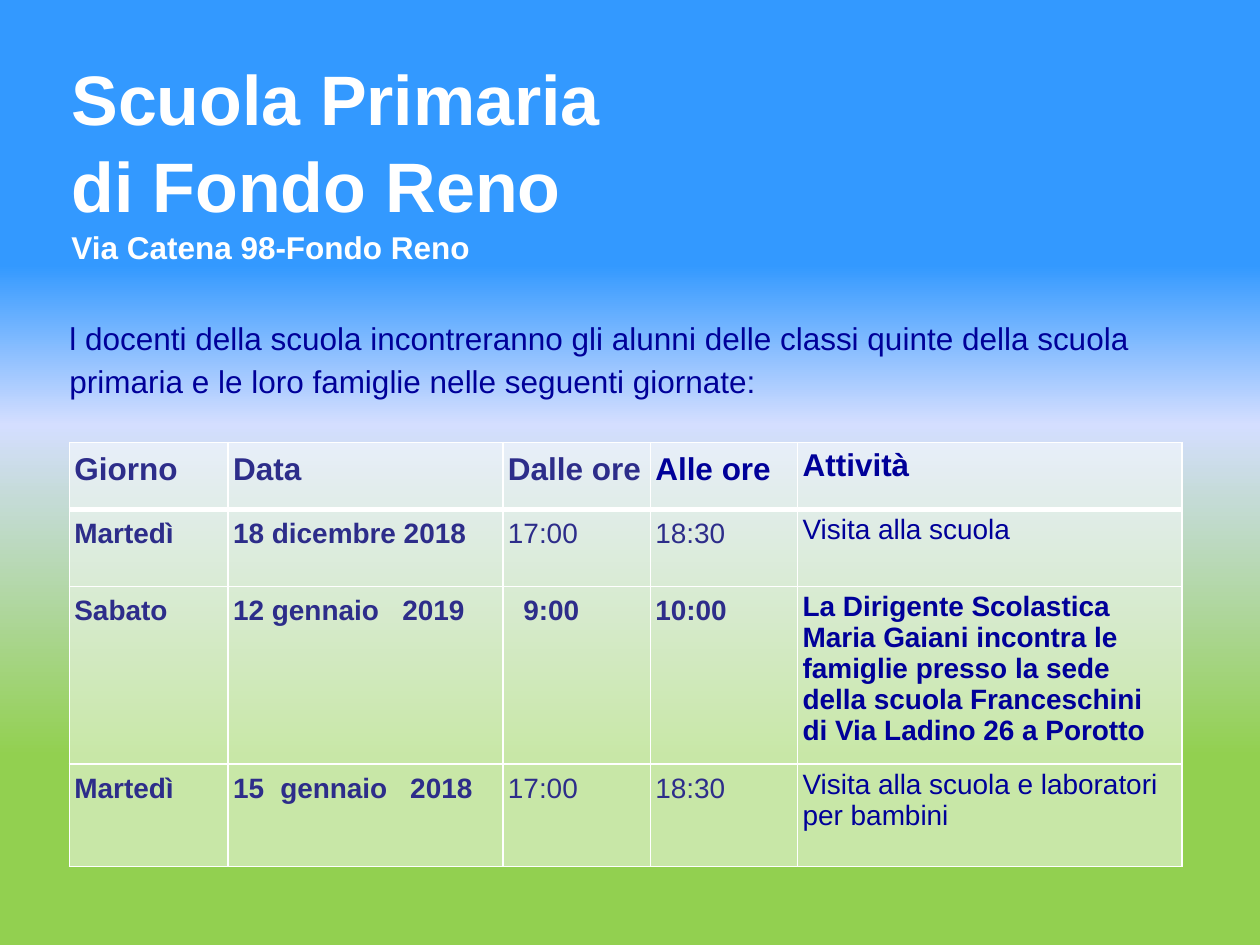
from dataclasses import dataclass

from lxml.etree import SubElement
from pptx import Presentation
from pptx.dml.color import RGBColor
from pptx.enum.text import MSO_ANCHOR
from pptx.oxml.ns import qn
from pptx.util import Cm, Pt

WHITE = RGBColor(0xFF, 0xFF, 0xFF)
NAVY = RGBColor(0x00, 0x00, 0x99)
INDIGO = RGBColor(0x2D, 0x2D, 0x8A)
SKY = RGBColor(0x33, 0x99, 0xFF)
LAVENDER = RGBColor(0xD4, 0xDE, 0xFF)
MIST = RGBColor(0xC4, 0xDB, 0xD5)
GRASS = RGBColor(0x92, 0xD0, 0x50)

BACKGROUND_STOPS = ((0, SKY), (28, SKY), (45, LAVENDER),
                    (53, MIST), (80, GRASS), (100, GRASS))
COLUMN_WIDTHS = (3.2, 5.54, 2.97, 2.97, 7.75)
ROW_HEIGHTS = (1.35, 1.55, 3.58, 2.06)
ACTIVITY_COLUMN = 4


@dataclass(frozen=True)
class Entry:
    text: str
    bold: bool = True
    color: RGBColor = INDIGO
    size: int = 16
    tabs: tuple[float, ...] = ()
    indent: float = 0


@dataclass(frozen=True)
class TextArea:
    left: float
    top: float
    width: float
    height: float
    inset: float
    line_spacing: float
    entries: tuple[Entry, ...]


TITLE = TextArea(1.19, 1.22, 22.86, 3.96, 0.25, 1.04, (
    Entry("Scuola Primaria\vdi Fondo Reno\v", color=WHITE, size=40),
    Entry("Via Catena 98-Fondo Reno", color=WHITE, size=18),
))
INTRODUCTION = TextArea(1.4, 6.35, 22.43, 1.68, 0, 1.14, (
    Entry("l docenti della scuola incontreranno gli alunni delle classi quinte "
          "della scuola primaria e le loro famiglie nelle seguenti giornate:",
          bold=False, color=NAVY, size=18),
))
SCHEDULE = (
    (Entry("Giorno", size=18), Entry("Data", size=18), Entry("Dalle ore", size=18),
     Entry("Alle ore", color=NAVY, size=18), Entry("Attività", color=NAVY, size=18)),
    (Entry("Martedì"), Entry("18 dicembre 2018"), Entry("17:00", False),
     Entry("18:30", False), Entry("Visita alla scuola", False, NAVY)),
    (Entry("Sabato"), Entry("12 gennaio\t2019", tabs=(3.41,)),
     Entry("9:00", indent=0.31), Entry("10:00"),
     Entry("La Dirigente Scolastica Maria Gaiani incontra le famiglie presso la sede "
           "della scuola Franceschini\ndi Via Ladino 26 a Porotto", color=NAVY)),
    (Entry("Martedì"), Entry("15\tgennaio\t2018", tabs=(0.95, 3.57)),
     Entry("17:00", False), Entry("18:30", False),
     Entry("Visita alla scuola e laboratori per bambini", False, NAVY)),
)


def apply_format(target, values: dict) -> None:
    for name, value in values.items():
        setattr(target, name, value)


def format_font(font, entry: Entry) -> None:
    apply_format(font, {"name": "Arial", "size": Pt(entry.size), "bold": entry.bold})
    font.color.rgb = entry.color


def paint_background(page) -> None:
    fill = page.background.fill
    fill.gradient()
    fill.gradient_angle = 270
    stop_list = next(page.element.iter(qn("a:gsLst")))
    for stop in list(stop_list):
        stop_list.remove(stop)
    for percent, color in BACKGROUND_STOPS:
        stop = SubElement(stop_list, qn("a:gs"), pos=str(percent * 1000))
        SubElement(stop, qn("a:srgbClr"), val=str(color))


def add_text_area(page, area: TextArea) -> None:
    box = page.shapes.add_textbox(Cm(area.left), Cm(area.top),
                                  Cm(area.width), Cm(area.height))
    frame = box.text_frame
    side, edge = Cm(area.inset), Cm(area.inset / 2)
    apply_format(frame, {
        "word_wrap": True, "vertical_anchor": MSO_ANCHOR.MIDDLE,
        "margin_left": side, "margin_right": side,
        "margin_top": edge, "margin_bottom": edge,
    })
    para = frame.paragraphs[0]
    para.line_spacing = area.line_spacing
    for entry in area.entries:
        for position, line in enumerate(entry.text.split("\v")):
            if position:
                para.add_line_break()
            if line:
                span = para.add_run()
                span.text = line
                format_font(span.font, entry)


def add_border(properties, side: str, points: int) -> None:
    line = SubElement(properties, qn(f"a:ln{side}"), w=str(int(Pt(points))))
    fill = SubElement(line, qn("a:solidFill"))
    SubElement(fill, qn("a:srgbClr"), val=str(WHITE))


def style_cell(cell, row: int) -> None:
    margin = Cm(0.1)
    apply_format(cell, {f"margin_{side}": margin
                        for side in ("left", "right", "top", "bottom")})
    properties = cell._tc.get_or_add_tcPr()
    widths = {"L": 1, "R": 1, "T": 3 if row == 1 else 1, "B": 3 if row == 0 else 1}
    for side, points in widths.items():
        add_border(properties, side, points)
    cell.fill.solid()
    cell.fill.fore_color.rgb = WHITE
    color = properties.find(qn("a:solidFill")).find(qn("a:srgbClr"))
    SubElement(color, qn("a:alpha"), val="50000")


def write_cell(cell, entry: Entry, spacing: dict) -> None:
    cell.text_frame.text = entry.text
    for para in cell.text_frame.paragraphs:
        apply_format(para, spacing)
        properties = para._p.get_or_add_pPr()
        if entry.indent:
            properties.set("marL", str(int(Cm(entry.indent))))
        if entry.tabs:
            tab_list = SubElement(properties, qn("a:tabLst"))
            for position in entry.tabs:
                SubElement(tab_list, qn("a:tab"), pos=str(int(Cm(position))), algn="l")
        for span in para.runs:
            format_font(span.font, entry)


def add_schedule(page) -> None:
    frame = page.shapes.add_table(len(ROW_HEIGHTS), len(COLUMN_WIDTHS),
                                  Cm(1.4), Cm(8.92),
                                  Cm(sum(COLUMN_WIDTHS)), Cm(sum(ROW_HEIGHTS)))
    table = frame.table
    apply_format(table, {"first_row": False, "horz_banding": False})
    for column, width in zip(table.columns, COLUMN_WIDTHS):
        column.width = Cm(width)
    for row, height in zip(table.rows, ROW_HEIGHTS):
        row.height = Cm(height)
    loose = {"line_spacing": 1.13, "space_after": Pt(9)}
    for row, entries in enumerate(SCHEDULE):
        for column, entry in enumerate(entries):
            cell = table.cell(row, column)
            style_cell(cell, row)
            write_cell(cell, entry, {} if column == ACTIVITY_COLUMN else loose)


def main() -> None:
    deck = Presentation()
    apply_format(deck, {"slide_width": Cm(25.4), "slide_height": Cm(19.05)})
    page = deck.slides.add_slide(deck.slide_layouts[6])
    paint_background(page)
    for area in (TITLE, INTRODUCTION):
        add_text_area(page, area)
    add_schedule(page)
    deck.save("out.pptx")


if __name__ == "__main__":
    main()
